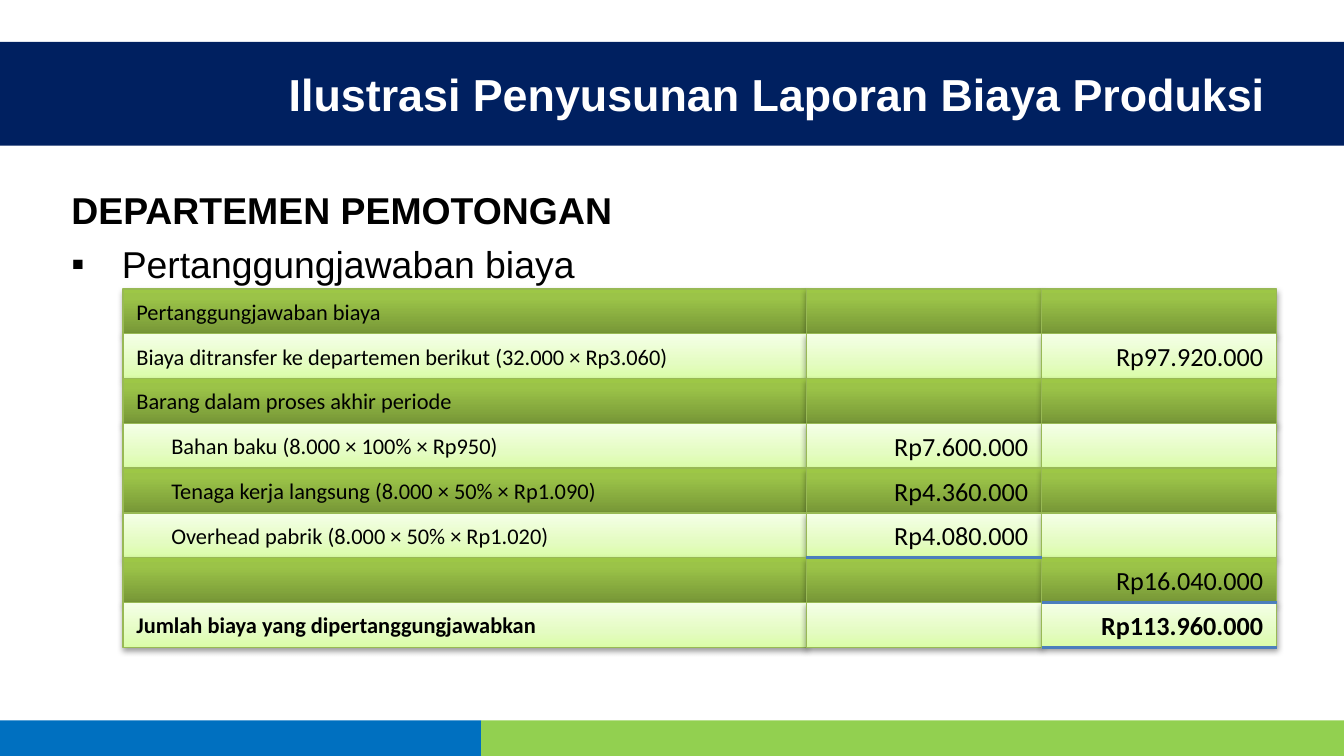
from lxml import etree
from pptx import Presentation
from pptx.dml.color import RGBColor
from pptx.enum.shapes import MSO_CONNECTOR, MSO_SHAPE
from pptx.enum.text import MSO_ANCHOR, MSO_AUTO_SIZE, PP_ALIGN
from pptx.oxml.ns import qn
from pptx.util import Pt

RECTANGLE = MSO_SHAPE.RECTANGLE
STRAIGHT = MSO_CONNECTOR.STRAIGHT
TOP, MIDDLE = MSO_ANCHOR.TOP, MSO_ANCHOR.MIDDLE
NO_FIT = MSO_AUTO_SIZE.NONE
LEFT, RIGHT = PP_ALIGN.LEFT, PP_ALIGN.RIGHT

BLACK = RGBColor(0x00, 0x00, 0x00)
WHITE = RGBColor(0xFF, 0xFF, 0xFF)
NAVY = RGBColor(0x00, 0x20, 0x60)
BLUE = RGBColor(0x00, 0x70, 0xC0)
GREEN = RGBColor(0x92, 0xD0, 0x50)
BORDER_GREEN = RGBColor(0x98, 0xB9, 0x55)
RULE_BLUE = RGBColor(0x4B, 0x7E, 0xBC)
# Gradient stops (percent, colour), from the bottom of a cell upwards
DARK_STOPS = [(0, RGBColor(0x77, 0x97, 0x37)), (80, RGBColor(0x9B, 0xC3, 0x48)),
              (100, RGBColor(0x9D, 0xC7, 0x46))]
LIGHT_STOPS = [(0, RGBColor(0xDA, 0xFD, 0xA7)), (35, RGBColor(0xE4, 0xFC, 0xC2)),
               (100, RGBColor(0xF5, 0xFF, 0xE7))]
# Row styles: gradient, shadow opacity (percent), shadow distance (points)
ROW_STYLES = [(DARK_STOPS, 35, 1.8), (LIGHT_STOPS, 38, 1.6)]

# Content
TITLE = "Ilustrasi Penyusunan Laporan Biaya Produksi"
DEPARTMENT = "DEPARTEMEN PEMOTONGAN"
TOPIC = "Pertanggungjawaban biaya"
# Cost rows: label, indented, part amount, total amount, bold
COST_ROWS = [
    ("Pertanggungjawaban biaya", False, "", "", False),
    ("Biaya ditransfer ke departemen berikut (32.000 × Rp3.060)", False, "", "Rp97.920.000", False),
    ("Barang dalam proses akhir periode", False, "", "", False),
    ("Bahan baku (8.000 × 100% × Rp950)", True, "Rp7.600.000", "", False),
    ("Tenaga kerja langsung (8.000 × 50% × Rp1.090)", True, "Rp4.360.000", "", False),
    ("Overhead pabrik (8.000 × 50% × Rp1.020)", True, "Rp4.080.000", "", False),
    ("", False, "", "Rp16.040.000", False),
    ("Jumlah biaya yang dipertanggungjawabkan", False, "", "Rp113.960.000", True),
]
# Sum rules: column, number of rows above the rule
SUM_RULES = [(1, 6), (2, 7), (2, 8)]
# Bands: left, top, width, height, colour
BANDS = [(0, 385.9, 257.8, 19.1, BLUE), (257.8, 385.9, 462.2, 19.1, GREEN),
         (0, 22.4, 720, 55.6, NAVY)]

# Cost grid
COLUMN_EDGES = [66, 432, 558, 684]
GRID_TOP, ROW_HEIGHT = 154.8, 24
LABEL_INDENT = 18.7


def place(shape, left, top, width, height):
    shape.left, shape.top = Pt(left), Pt(top)
    shape.width, shape.height = Pt(width), Pt(height)


def style(paragraph, font_name, size, color, bold, align):
    paragraph.alignment = align
    font = paragraph.font
    font.name, font.size, font.bold = font_name, Pt(size), bold
    font.color.rgb = color


def set_bullet(paragraph, indent, bullet=None):
    properties = paragraph._p.get_or_add_pPr()
    properties.set("marL", str(Pt(indent)))
    properties.set("indent", str(-Pt(indent)))
    if bullet:
        etree.SubElement(properties, qn("a:buChar")).set("char", bullet)
    else:
        etree.SubElement(properties, qn("a:buNone"))


def add_color(parent, color, opacity=100):
    node = etree.SubElement(parent, qn("a:srgbClr"), val=str(color))
    if opacity < 100:
        etree.SubElement(node, qn("a:alpha"), val=str(opacity * 1000))


def add_cell(slide, column, row, text, size, align, bold, indent=0):
    left, right = COLUMN_EDGES[column:column + 2]
    cell = slide.shapes.add_shape(RECTANGLE, Pt(left), Pt(GRID_TOP + row * ROW_HEIGHT),
                                  Pt(right - left), Pt(ROW_HEIGHT))
    cell.line.color.rgb = BORDER_GREEN
    cell.line.width = Pt(0.75)
    cell.shadow.inherit = False
    stops, opacity, distance = ROW_STYLES[row % 2]
    properties = cell._element.spPr

    # Vertical gradient, placed just after the geometry
    gradient = etree.Element(qn("a:gradFill"), rotWithShape="1")
    stop_list = etree.SubElement(gradient, qn("a:gsLst"))
    for position, color in stops:
        add_color(etree.SubElement(stop_list, qn("a:gs"), pos=str(position * 1000)), color)
    etree.SubElement(gradient, qn("a:lin"), ang=str(270 * 60000), scaled="0")
    properties.find(qn("a:prstGeom")).addnext(gradient)

    # Soft shadow below
    shadow = etree.SubElement(properties.find(qn("a:effectLst")), qn("a:outerShdw"),
                              blurRad=str(Pt(3.1)), dist=str(Pt(distance)),
                              dir=str(90 * 60000), rotWithShape="0")
    add_color(shadow, BLACK, opacity)

    if text:
        frame = cell.text_frame
        frame.text, frame.word_wrap = text, True
        frame.vertical_anchor = MIDDLE
        if indent:
            frame.paragraphs[0]._p.get_or_add_pPr().set("marL", str(Pt(indent)))
        style(frame.paragraphs[0], "Calibri", size, BLACK, bold, align)


def main():
    deck = Presentation()
    deck.slide_width, deck.slide_height = Pt(720), Pt(405)
    slide = deck.slides.add_slide(deck.slide_layouts[1])

    # Bands, behind the placeholders
    for depth, (left, top, width, height, color) in enumerate(BANDS, start=2):
        band = slide.shapes.add_shape(RECTANGLE, Pt(left), Pt(top), Pt(width), Pt(height))
        band.fill.solid()
        band.fill.fore_color.rgb = color
        band.line.fill.background()
        band.shadow.inherit = False
        slide.shapes._spTree.insert(depth, band._element)

    # Title
    title = slide.shapes.title
    place(title, 119.5, 22.4, 565.2, 55.6)
    heading = title.text_frame
    heading.text, heading.word_wrap = TITLE, True
    heading.auto_size, heading.vertical_anchor = NO_FIT, MIDDLE
    style(heading.paragraphs[0], "Arial", 24, WHITE, True, RIGHT)

    # Department and topic
    body = slide.placeholders[1]
    place(body, 31, 95, 653.8, 53.3)
    intro = body.text_frame
    intro.text, intro.word_wrap = DEPARTMENT, True
    intro.auto_size, intro.vertical_anchor = NO_FIT, TOP
    intro.margin_top = Pt(5.3)
    department, topic = intro.paragraphs[0], intro.add_paragraph()
    topic.text = TOPIC
    set_bullet(department, 0)
    set_bullet(topic, 27, "▪")
    style(department, "Arial", 20, BLACK, True, LEFT)
    style(topic, "Arial", 20, BLACK, False, LEFT)
    department.space_before, topic.space_before = Pt(0), Pt(4.8)

    # Cost grid
    for row, (label, indented, part, total, bold) in enumerate(COST_ROWS):
        add_cell(slide, 0, row, label, 12, LEFT, bold, LABEL_INDENT if indented else 0)
        for column, amount in enumerate((part, total), start=1):
            add_cell(slide, column, row, amount, 14, RIGHT, bold)

    # Sum rules
    for column, rows_above in SUM_RULES:
        left, right = COLUMN_EDGES[column:column + 2]
        y = Pt(GRID_TOP + rows_above * ROW_HEIGHT)
        rule = slide.shapes.add_connector(STRAIGHT, Pt(left), y, Pt(right), y)
        rule.line.color.rgb = RULE_BLUE
        rule.line.width = Pt(1.5)
        etree.SubElement(rule._element.spPr, qn("a:effectLst"))

    deck.save("out.pptx")


if __name__ == "__main__":
    main()
